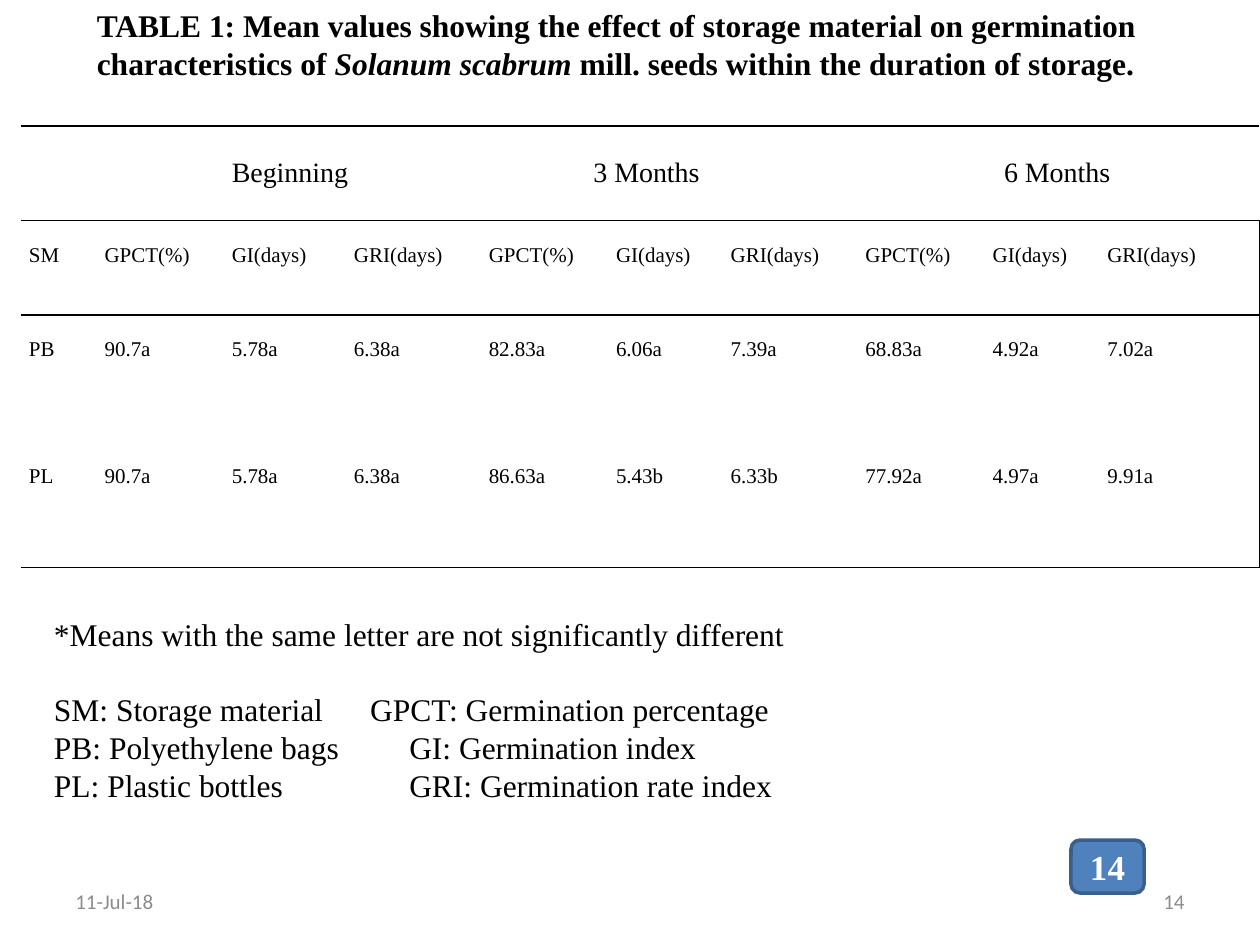
from lxml.etree import SubElement
from pptx import Presentation
from pptx.dml.color import RGBColor
from pptx.enum.shapes import MSO_SHAPE
from pptx.enum.text import MSO_ANCHOR, PP_ALIGN
from pptx.oxml.ns import qn
from pptx.util import Inches, Pt

WIDE, HIGH = 10, 7.5
INK = {"text": "000000", "mute": "8C8C8C", "fill": "4F81BD", "edge": "3A5F8C", "pale": "FFFFFF"}
SERIF, SANS = "Times New Roman", "Calibri"

TITLE = [
    ("TABLE 1: Mean values showing the effect of storage material on germination characteristics of ", False),
    ("Solanum scabrum ", True),
    ("mill. seeds within the duration of storage.", False),
]
SPANS = [("Beginning", 0, 3, 16.1), ("3 Months", 4, 6, 8.3), ("6 Months", 7, 9, 11)]
HEADS = ["SM"] + ["GPCT(%)", "GI(days)", "GRI(days)"] * 3
DATA = [
    ["PB", "90.7a", "5.78a", "6.38a", "82.83a", "6.06a", "7.39a", "68.83a", "4.92a", "7.02a"],
    ["PL", "90.7a", "5.78a", "6.38a", "86.63a", "5.43b", "6.33b", "77.92a", "4.97a", "9.91a"],
]
COLS = [6, 10.1, 9.7, 10.7, 10.1, 9.1, 10.7, 10.1, 9.1, 12.65]
ROWS = [10, 10, 13.35, 13.35]
RULES = [1, 0.5, 1, 0, 0.5]
NOTE = "*Means with the same letter are not significantly different"
KEYS = [
    ("SM: Storage material", "GPCT: Germination percentage", 25.1),
    ("PB: Polyethylene bags", "GI: Germination index", 28.2),
    ("PL: Plastic bottles", "GRI: Germination rate index", 28.2),
]
PAGE, DATE = "14", "11-Jul-18"


def across(share):
    return Inches(WIDE * share / 100)


def down(share):
    return Inches(HIGH * share / 100)


def place(left, top, width, height):
    return across(left), down(top), across(width), down(height)


def write(para, text, size=18, font=SERIF, color="text", bold=False, slant=False,
          align=None, space=None, after=None, stop=None):
    if align is not None:
        para.alignment = align
    if space is not None:
        para.line_spacing = space
    if after is not None:
        para.space_after = Pt(after)
    if stop is not None:
        stops = SubElement(para._p.get_or_add_pPr(), qn("a:tabLst"))
        SubElement(stops, qn("a:tab"), pos=str(across(stop)), algn="l")
    run = para.add_run()
    run.text = text
    face = run.font
    face.size, face.name, face.bold, face.italic = Pt(size), font, bold, slant
    face.color.rgb = RGBColor.from_string(INK[color])


def add_box(left, top, width, height, anchor=MSO_ANCHOR.TOP):
    frame = slide.shapes.add_textbox(*place(left, top, width, height)).text_frame
    frame.word_wrap = True
    frame.vertical_anchor = anchor
    return frame


def add_rule(cell, side, width):
    line = SubElement(cell._tc.get_or_add_tcPr(), qn("a:ln" + side), w=str(Pt(width)))
    if width:
        fill = SubElement(line, qn("a:solidFill"))
        SubElement(fill, qn("a:srgbClr"), val=INK["text"])
    else:
        SubElement(line, qn("a:noFill"))


def add_grid():
    frame = slide.shapes.add_table(
        len(ROWS), len(COLS), *place(1.7, 13.33, sum(COLS), sum(ROWS)))
    grid = frame.table
    grid.first_row = grid.horz_banding = False
    style = grid._tbl.tblPr.find(qn("a:tableStyleId"))
    style.text = "{2D5ABB26-0587-4C30-8999-92F81FD0307C}"
    for col, share in zip(grid.columns, COLS):
        col.width = across(share)
    for row, share in zip(grid.rows, ROWS):
        row.height = down(share)
    for r in range(len(ROWS)):
        for c in range(len(COLS)):
            cell = grid.cell(r, c)
            cell.margin_left = cell.margin_right = across(0.6)
            cell.margin_top = cell.margin_bottom = 0
            if r and c == len(COLS) - 1:
                add_rule(cell, "R", 0.5)
            add_rule(cell, "T", RULES[r])
            add_rule(cell, "B", RULES[r + 1])
            cell.fill.background()
    for text, first, last, stop in SPANS:
        cell = grid.cell(0, first)
        cell.merge(grid.cell(0, last))
        write(cell.text_frame.paragraphs[0], "\t" + text, size=16, space=2, stop=stop)
    for r, row in enumerate([HEADS] + DATA, 1):
        for c, text in enumerate(row):
            write(grid.cell(r, c).text_frame.paragraphs[0], text, size=12, space=2)


def add_badge():
    badge = slide.shapes.add_shape(MSO_SHAPE.ROUNDED_RECTANGLE, *place(85, 88.9, 5.8, 5.6))
    badge.shadow.inherit = False
    badge.fill.solid()
    badge.fill.fore_color.rgb = RGBColor.from_string(INK["fill"])
    badge.line.color.rgb = RGBColor.from_string(INK["edge"])
    badge.line.width = Pt(2)
    frame = badge.text_frame
    frame.vertical_anchor = MSO_ANCHOR.MIDDLE
    write(frame.paragraphs[0], PAGE, size=20, color="pale", bold=True, align=PP_ALIGN.CENTER)


deck = Presentation()
deck.slide_width, deck.slide_height = Inches(WIDE), Inches(HIGH)
slide = deck.slides.add_slide(deck.slide_layouts[6])

add_grid()

title = add_box(6.7, 0, 91.7, 9.5).paragraphs[0]
for text, slant in TITLE:
    write(title, text, bold=True, slant=slant)

notes = add_box(3.3, 64.4, 95, 21.6)
write(notes.paragraphs[0], NOTE, after=21.6)
for term, other, stop in KEYS:
    write(notes.add_paragraph(), term + "\t" + other, stop=stop)

for left, text, align in ((5, DATE, PP_ALIGN.LEFT), (71.7, PAGE, PP_ALIGN.RIGHT)):
    foot = add_box(left, 92.7, 23.3, 5.3, MSO_ANCHOR.MIDDLE)
    write(foot.paragraphs[0], text, size=12, font=SANS, color="mute", align=align)

add_badge()
deck.save("out.pptx")
